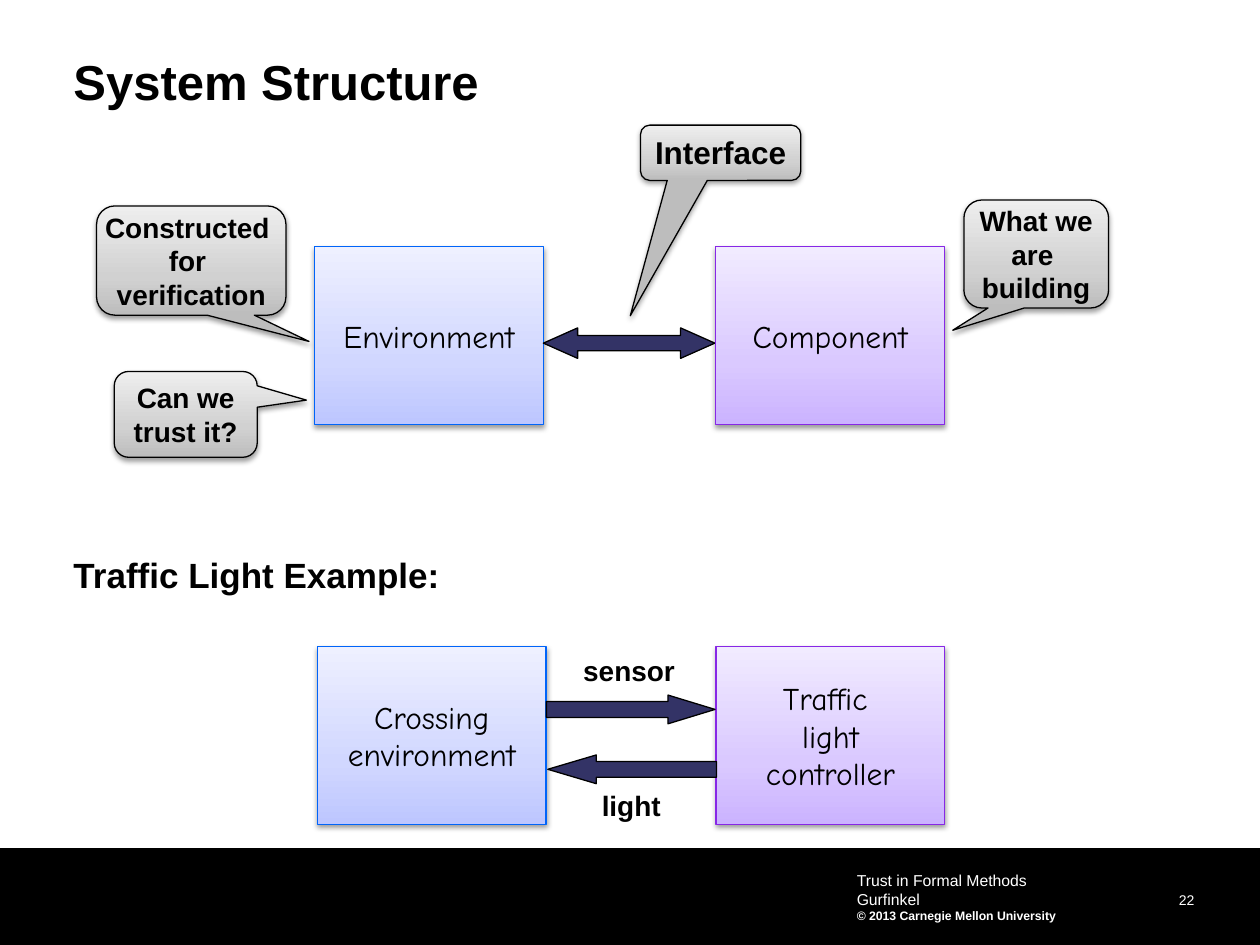
from copy import deepcopy

from lxml import etree
from pptx import Presentation
from pptx.dml.color import RGBColor
from pptx.enum.shapes import MSO_SHAPE
from pptx.enum.text import MSO_ANCHOR, PP_ALIGN
from pptx.oxml.ns import qn
from pptx.util import Pt

RECT = MSO_SHAPE.RECTANGLE
CALLOUT = MSO_SHAPE.ROUNDED_RECTANGULAR_CALLOUT
RIGHT_ARROW = MSO_SHAPE.RIGHT_ARROW
LEFT_ARROW = MSO_SHAPE.LEFT_ARROW
BOTH_ARROW = MSO_SHAPE.LEFT_RIGHT_ARROW
TOP, MIDDLE = MSO_ANCHOR.TOP, MSO_ANCHOR.MIDDLE
LEFT, CENTER, RIGHT = PP_ALIGN.LEFT, PP_ALIGN.CENTER, PP_ALIGN.RIGHT

COLORS = {
    "black": "000000",
    "white": "FFFFFF",
    "navy": "333366",
    "blue": "0064F9",
    "purple": "8727E6",
}
FADES = {
    "gray": ("BDBDBD", "D1D1D1", "EEEEEE"),
    "blue": ("BDC6FF", "D1D7FF", "EEF0FF"),
    "purple": ("CBB3FF", "DAC9FF", "F1EBFF"),
}
STOPS = (0, 0.35, 1)
BOX_W, BOX_H = 130.7, 101.5


def rgb(name):
    return RGBColor.from_string(COLORS[name])


def write(shape, text, size=16, font="Arial", color="black", bold=True,
          align=LEFT, anchor=TOP, inset=(0, 0), space=None, wrap=False):
    frame = shape.text_frame
    frame.word_wrap = wrap
    frame.vertical_anchor = anchor
    frame.margin_left = frame.margin_right = Pt(inset[0])
    frame.margin_top = frame.margin_bottom = Pt(inset[1])
    frame.text = text
    for para in frame.paragraphs:
        para.alignment = align
        para.line_spacing = space
        para.font.size = Pt(size)
        para.font.name = font
        para.font.bold = bold
        para.font.color.rgb = rgb(color)
    return frame


def label(slide, spot, text, **style):
    return write(slide.shapes.add_textbox(*map(Pt, spot)), text, **style)


def solid(slide, kind, spot, color, line=None, adjust=()):
    shape = slide.shapes.add_shape(kind, *map(Pt, spot))
    for i, value in enumerate(adjust):
        shape.adjustments[i] = value
    shape.fill.solid()
    shape.fill.fore_color.rgb = rgb(color)
    if line:
        shape.line.color.rgb = rgb(line)
        shape.line.width = Pt(0.75)
    else:
        shape.line.fill.background()
    shape.shadow.inherit = False
    return shape


def fade(shape, tones):
    fill = shape.fill
    fill.gradient()
    fill.gradient_angle = 90
    stops = shape._element.spPr.find(qn("a:gradFill")).find(qn("a:gsLst"))
    stops.append(deepcopy(stops[-1]))
    for stop, place, tone in zip(fill.gradient_stops, STOPS, tones):
        stop.position = place
        stop.color.rgb = RGBColor.from_string(tone)


def shade(shape):
    effects = shape._element.spPr.find(qn("a:effectLst"))
    shadow = etree.SubElement(
        effects, qn("a:outerShdw"), blurRad=str(Pt(3.1)), dist=str(Pt(1.6)),
        dir="5400000", rotWithShape="0")
    tint = etree.SubElement(shadow, qn("a:srgbClr"), val=COLORS["black"])
    etree.SubElement(tint, qn("a:alpha"), val="38000")


def panel(slide, kind, spot, tone, line, text, adjust=(), **style):
    shape = solid(slide, kind, spot, "white", line, adjust)
    fade(shape, FADES[tone])
    shade(shape)
    write(shape, text, align=CENTER, **style)


def block(slide, left, top, tone, text):
    panel(slide, RECT, (left, top, BOX_W, BOX_H), tone, tone, text, size=18,
          font="Comic Neue", bold=False, anchor=MIDDLE, inset=(7.2, 3.6))


def callout(slide, spot, tip, text, size=16, anchor=MIDDLE):
    panel(slide, CALLOUT, spot, "gray", "black", text, (*tip, 0.167),
          size=size, anchor=anchor, inset=(6.5, 3.2))


def arrow(slide, kind, spot, adjust):
    solid(slide, kind, spot, "navy", "black", adjust)


def footer(slide):
    solid(slide, RECT, (0, 484.6, 720, 55.4), "black")
    label(slide, (616.3, 506.2, 66.2, 13), "22", size=8, color="white",
          bold=False, align=RIGHT, anchor=MIDDLE, space=Pt(13), wrap=True)
    frame = label(slide, (486, 494, 180, 37.4),
                  "Trust in Formal Methods\nGurfinkel\n"
                  "© 2013 Carnegie Mellon University",
                  size=9, color="white", bold=False, inset=(3.6, 3.6),
                  wrap=True)
    last = frame.paragraphs[-1].font
    last.size, last.bold = Pt(7), True


def main():
    deck = Presentation()
    deck.slide_width, deck.slide_height = Pt(720), Pt(540)
    slide = deck.slides.add_slide(deck.slide_layouts[6])

    footer(slide)
    label(slide, (42, 33, 642, 30), "System Structure", size=28, space=0.9,
          wrap=True)
    label(slide, (42, 318.2, 312.5, 36), "Traffic Light Example:", size=20,
          space=0.95, wrap=True)

    callout(slide, (550.8, 114.3, 82.7, 61.7), (-0.577, 0.706),
            "What we\nare \nbuilding")
    callout(slide, (55.2, 117.7, 108.2, 62.4), (0.622, 0.741),
            "Constructed \nfor \nverification")
    callout(slide, (65.3, 212.3, 81.7, 49), (0.844, -0.166),
            "Can we\ntrust it?")

    block(slide, 181.4, 369.5, "blue", "Crossing\nenvironment")
    block(slide, 409.2, 369.5, "purple", "Traffic \nlight\ncontroller")
    arrow(slide, RIGHT_ARROW, (312.2, 397.2, 96.4, 16.4), (0.557, 1.638))
    arrow(slide, LEFT_ARROW, (313, 431.4, 96.4, 16.4), (0.55, 1.689))
    label(slide, (326.2, 370.1, 67, 26.6), "sensor", inset=(7.2, 3.6))
    label(slide, (336.8, 447.1, 48.2, 26.6), "light", inset=(7.2, 3.6))

    block(slide, 179.8, 141, "blue", "Environment")
    arrow(slide, BOTH_ARROW, (310.5, 187.4, 98, 17.4), (0.5, 1.124))
    block(slide, 409, 141, "purple", "Component")
    callout(slide, (366, 71.5, 91.6, 31.6), (-0.564, 2.947), "Interface",
            size=18, anchor=TOP)

    deck.save("out.pptx")


if __name__ == "__main__":
    main()
